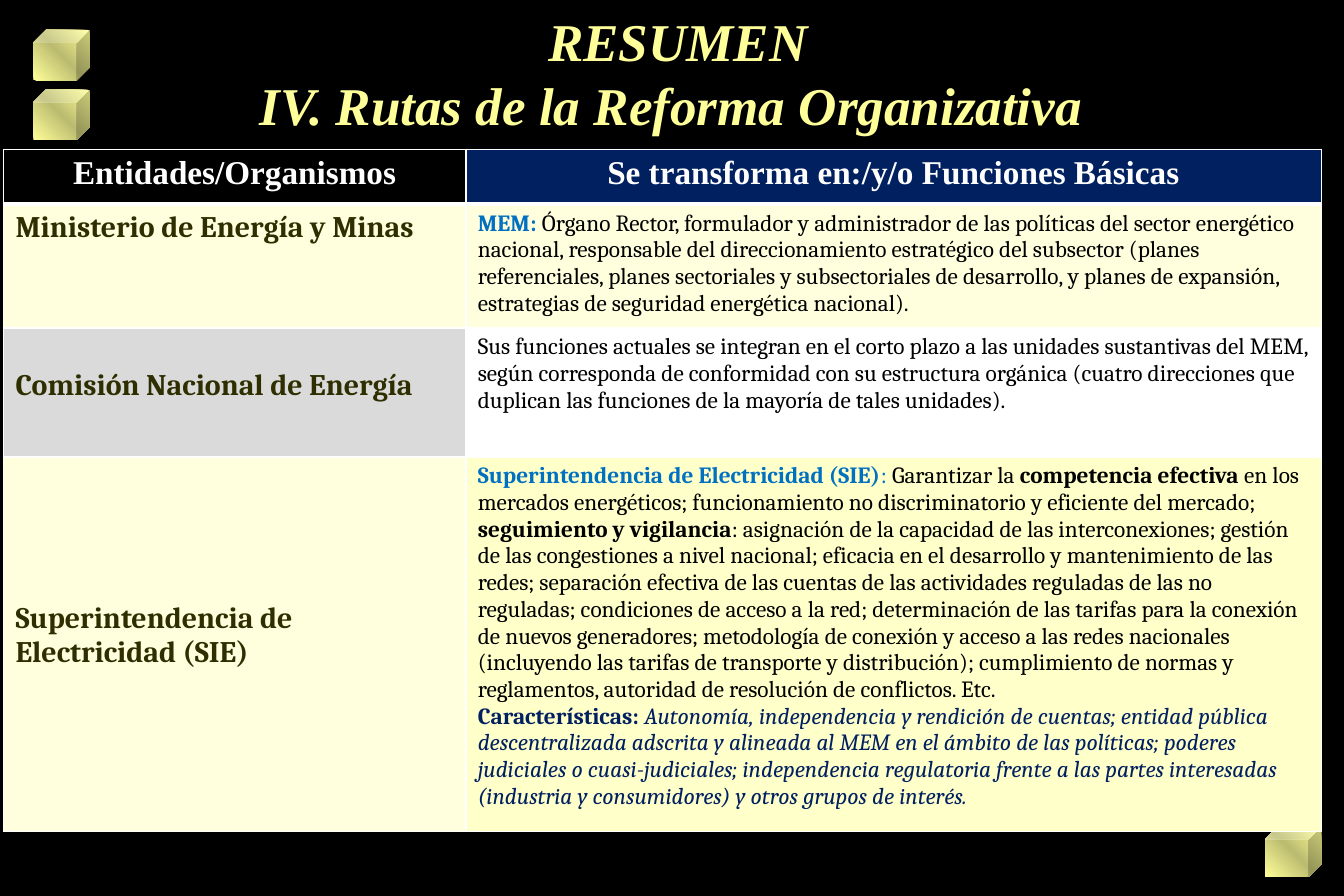
from copy import deepcopy
from dataclasses import dataclass

from lxml import etree
from pptx import Presentation
from pptx.dml.color import RGBColor
from pptx.enum.shapes import MSO_SHAPE
from pptx.enum.text import MSO_ANCHOR, PP_ALIGN
from pptx.oxml.ns import qn
from pptx.util import Inches, Pt

CUBE = MSO_SHAPE.CUBE
MIDDLE = MSO_ANCHOR.MIDDLE
CENTER, LEFT = PP_ALIGN.CENTER, PP_ALIGN.LEFT

YELLOW, OLIVE, WHITE, BLACK = "FFFF99", "BCBC71", "FFFFFF", "000000"
NAVY, BLUE, DARK_OLIVE = "002060", "0070C0", "2E2E00"
CREAM, GREY, PALE_YELLOW = "FFFFDE", "DADADA", "FFFFCA"
CUBE_SIZE = (0.47, 0.42)
LINE_18PT = 0.29  # height of one line of an entity name


@dataclass
class Run:
    text: str
    color: str = BLACK
    size: float = 14
    bold: bool = False
    italic: bool = False
    font: str = "Cambria"


@dataclass
class Cell:
    paragraphs: list[list[Run]]
    fill: str
    align: PP_ALIGN = LEFT
    lines_above: int = 0


def rgb(value: str) -> RGBColor:
    return RGBColor.from_string(value)


def write_runs(paragraph, runs: list[Run], align: PP_ALIGN) -> None:
    paragraph.alignment = align
    for item in runs:
        run = paragraph.add_run()
        run.text = item.text
        run.font.color.rgb = rgb(item.color)
        font_format = {"name": item.font, "size": Pt(item.size),
                       "bold": item.bold, "italic": item.italic}
        for key, value in font_format.items():
            setattr(run.font, key, value)


def add_cube(slide, left: float, top: float) -> None:
    cube = slide.shapes.add_shape(CUBE, Inches(left), Inches(top),
                                  *map(Inches, CUBE_SIZE))
    cube.shadow.inherit = False
    cube.line.fill.background()
    cube.fill.gradient()
    cube.fill.gradient_angle = 45
    first_stop = next(cube._element.iter(qn("a:gs")))
    first_stop.addnext(deepcopy(first_stop))
    stops = zip(cube.fill.gradient_stops, (0, 0.5, 1), (YELLOW, OLIVE, YELLOW))
    for stop, position, color in stops:
        stop.position = position
        stop.color.rgb = rgb(color)


def set_borders(cell, widths: dict[str, float]) -> None:
    properties = cell._tc.get_or_add_tcPr()
    for side, width in widths.items():
        line = etree.SubElement(properties, qn(f"a:ln{side}"), w=str(Pt(width)))
        fill = etree.SubElement(line, qn("a:solidFill"))
        etree.SubElement(fill, qn("a:srgbClr"), val=WHITE)


def fill_cell(cell, content: Cell, widths: dict[str, float]) -> None:
    set_borders(cell, widths)
    cell.fill.solid()
    cell.fill.fore_color.rgb = rgb(content.fill)
    cell.margin_top = Inches(0.05 + content.lines_above * LINE_18PT)
    frame = cell.text_frame
    for index, runs in enumerate(content.paragraphs):
        paragraph = frame.add_paragraph() if index else frame.paragraphs[0]
        write_runs(paragraph, runs, content.align)


def heading(text: str, fill: str) -> Cell:
    return Cell([[Run(text, WHITE, 20, True, font="Times New Roman")]], fill, CENTER)


def entity(text: str, fill: str, lines_above: int = 0) -> Cell:
    return Cell([[Run(text, DARK_OLIVE, 18, True)]], fill, lines_above=lines_above)


ROW_HEIGHTS = (0.46, 1.0, 1.08, 3.01)
COLUMN_WIDTHS = (3.87, 7.16)
ROWS = [
    [heading("Entidades/Organismos", BLACK),
     heading("Se transforma en:/y/o Funciones Básicas", NAVY)],
    [entity("Ministerio de Energía y Minas", CREAM),
     Cell([[
         Run("MEM: ", BLUE, bold=True),
         Run("Órgano Rector, formulador y administrador de las políticas del sector "
             "energético nacional, responsable del direccionamiento estratégico del "
             "subsector (planes referenciales, planes sectoriales y subsectoriales de "
             "desarrollo, y planes de expansión, estrategias de seguridad energética "
             "nacional)."),
     ]], CREAM)],
    [entity("Comisión Nacional de Energía", GREY, 1),
     Cell([[
         Run("Sus funciones actuales se integran en el corto plazo a las unidades "
             "sustantivas del MEM, según corresponda de conformidad con su estructura "
             "orgánica (cuatro direcciones que duplican las funciones de la mayoría de "
             "tales unidades)."),
     ]], WHITE)],
    [entity("Superintendencia de Electricidad (SIE)", CREAM, 4),
     Cell([[
         Run("Superintendencia de Electricidad (SIE)", BLUE, bold=True),
         Run(": ", BLUE),
         Run("Garantizar la "),
         Run("competencia efectiva ", bold=True),
         Run("en los mercados energéticos; funcionamiento no discriminatorio y "
             "eficiente del mercado; "),
         Run("seguimiento y vigilancia", bold=True),
         Run(": asignación de la capacidad de las interconexiones; gestión de las "
             "congestiones a nivel nacional; eficacia en el desarrollo y mantenimiento "
             "de las redes; separación efectiva de las cuentas de las actividades "
             "reguladas de las no reguladas; condiciones de acceso a la red; "
             "determinación de las tarifas para la conexión de nuevos generadores; "
             "metodología de conexión y acceso a las redes nacionales (incluyendo las "
             "tarifas de transporte y distribución); cumplimiento de normas y "
             "reglamentos, autoridad de resolución de conflictos. Etc."),
     ], [
         Run("Características: ", NAVY, bold=True),
         Run("Autonomía, independencia y rendición de cuentas; entidad pública "
             "descentralizada adscrita y alineada al MEM en el ámbito de las políticas; "
             "poderes judiciales o cuasi-judiciales; independencia regulatoria frente a "
             "las partes interesadas (industria y consumidores) y otros grupos de "
             "interés.", NAVY, italic=True),
     ]], PALE_YELLOW)],
]


def add_title(slide) -> None:
    title = slide.shapes.add_textbox(Inches(0.84), Inches(-0.02),
                                     Inches(9.56), Inches(1.25))
    frame = title.text_frame
    for key, value in {"word_wrap": True, "vertical_anchor": MIDDLE}.items():
        setattr(frame, key, value)
    paragraph = frame.paragraphs[0]
    for index, line in enumerate((" RESUMEN", "IV. Rutas de la Reforma Organizativa")):
        if index:
            paragraph.add_line_break()
        write_runs(paragraph, [Run(line, YELLOW, 32, True, True, "Times New Roman")],
                   CENTER)


def add_reform_table(slide) -> None:
    table = slide.shapes.add_table(
        len(ROWS), len(COLUMN_WIDTHS), Inches(0.03), Inches(1.25),
        Inches(sum(COLUMN_WIDTHS)), Inches(sum(ROW_HEIGHTS))).table
    table.first_row = False
    table.horz_banding = False
    for column, width in zip(table.columns, COLUMN_WIDTHS):
        column.width = Inches(width)
    for index, (row, height, contents) in enumerate(zip(table.rows, ROW_HEIGHTS, ROWS)):
        row.height = Inches(height)
        # The rule under the heading row is thicker
        widths = {"L": 1, "R": 1, "T": 3 if index == 1 else 1, "B": 3 if index == 0 else 1}
        for cell, content in zip(row.cells, contents):
            fill_cell(cell, content, widths)


def main() -> None:
    deck = Presentation()
    deck.slide_width, deck.slide_height = Inches(11.25), Inches(7.5)
    slide = deck.slides.add_slide(deck.slide_layouts[6])
    slide.background.fill.solid()
    slide.background.fill.fore_color.rgb = rgb(BLACK)

    # Corner cubes, stacked in pairs half an inch apart
    for left, first_top in ((0.28, 0.25), (10.59, 6.42)):
        for step in range(2):
            add_cube(slide, left, first_top + step * 0.5)

    # Title and table
    add_title(slide)
    add_reform_table(slide)
    deck.save("out.pptx")


if __name__ == "__main__":
    main()
